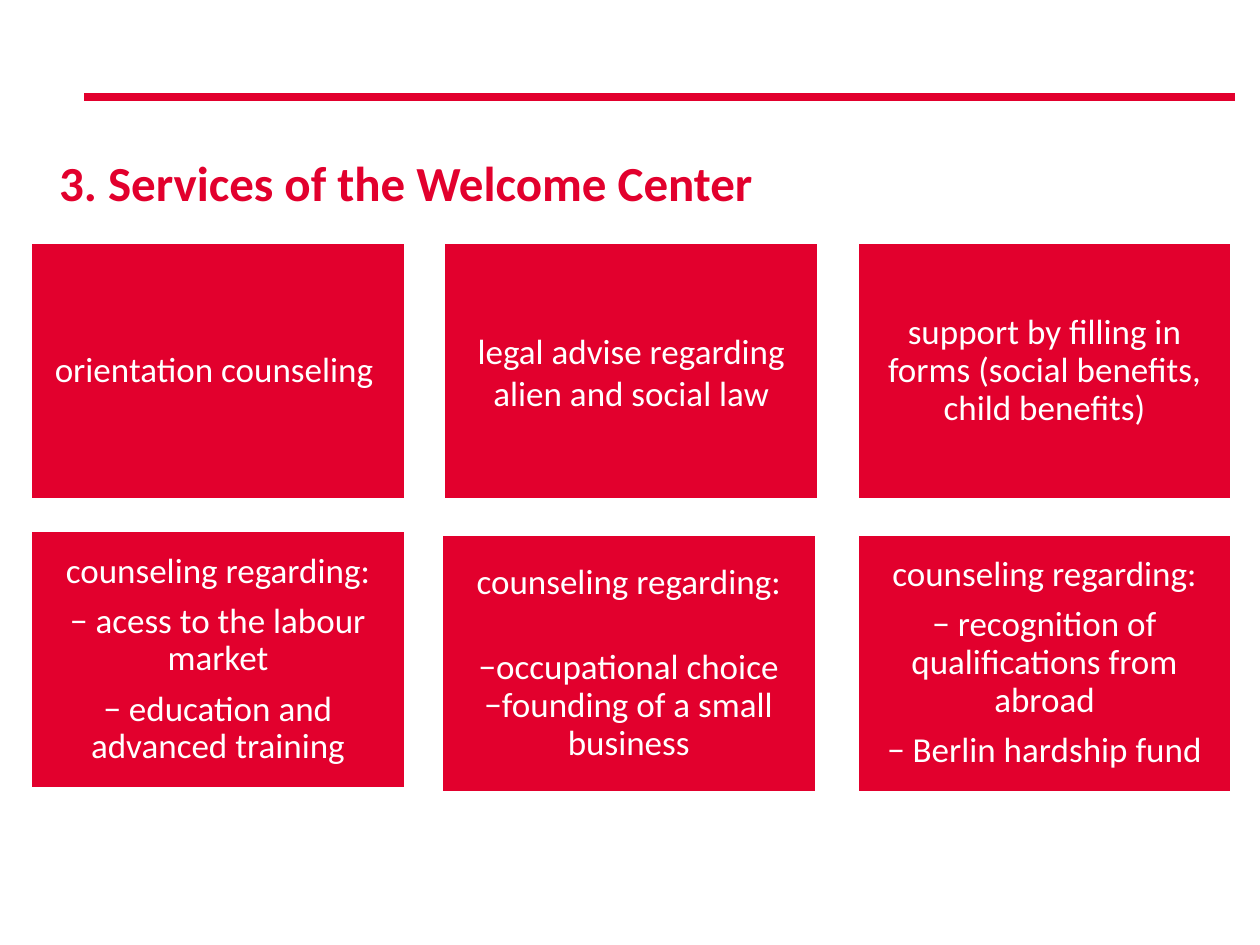
import lxml.etree
import pptx
import pptx.dml.color
import pptx.enum.shapes
import pptx.enum.text
import pptx.oxml.ns
import pptx.util

RED = "E2002D"
WHITE = "FFFFFF"


def color(hex_string):
    return pptx.dml.color.RGBColor.from_string(hex_string)


class ServicesSlide:
    font = "Calibri"
    grid_left, grid_top = 0.24, 1.92
    column_pitch, row_pitch = 3.28, 2.32
    card_width, card_height = 2.98, 2.05
    card_margin = 0.08

    def __init__(self, presentation):
        self.slide = presentation.slides.add_slide(presentation.slide_layouts[6])

    def style(self, paragraph, size, hex_string, bold=False):
        paragraph.font.name = self.font
        paragraph.font.size = pptx.util.Pt(size)
        paragraph.font.bold = bold
        paragraph.font.color.rgb = color(hex_string)

    def set_margins(self, frame, inches):
        frame.word_wrap = True
        frame.margin_left = frame.margin_right = pptx.util.Inches(inches)
        frame.margin_top = frame.margin_bottom = pptx.util.Inches(inches)

    def title(self, text, left, top, width, height):
        box = self.slide.shapes.add_textbox(
            *map(pptx.util.Inches, (left, top, width, height)))
        self.set_margins(box.text_frame, 0)
        heading = box.text_frame.paragraphs[0]
        heading.text = text
        self.style(heading, 28, RED, bold=True)

    def rule(self, left, right, y):
        line = self.slide.shapes.add_connector(
            pptx.enum.shapes.MSO_CONNECTOR.STRAIGHT,
            *map(pptx.util.Inches, (left, y, right, y)))
        line.line.color.rgb = color(RED)
        line.line.width = pptx.util.Pt(4.75)
        lxml.etree.SubElement(line._element.spPr,
                              pptx.oxml.ns.qn("a:effectLst"))

    def card(self, column, row, lines, gaps, spacing=0.9, shift=(0, 0)):
        """Fill a grid cell; gaps are points after each line, shift is inches."""
        left = self.grid_left + column * self.column_pitch + shift[0]
        top = self.grid_top + row * self.row_pitch + shift[1]
        card = self.slide.shapes.add_shape(
            pptx.enum.shapes.MSO_SHAPE.RECTANGLE,
            *map(pptx.util.Inches,
                 (left, top, self.card_width, self.card_height)))
        card.shadow.inherit = False
        card.fill.solid()
        card.fill.fore_color.rgb = color(RED)
        card.line.color.rgb = color(WHITE)
        card.line.width = pptx.util.Pt(2)
        frame = card.text_frame
        self.set_margins(frame, self.card_margin)
        frame.vertical_anchor = pptx.enum.text.MSO_ANCHOR.MIDDLE
        frame.text = "\n".join(lines)
        for paragraph, gap in zip(frame.paragraphs, gaps):
            paragraph.alignment = pptx.enum.text.PP_ALIGN.CENTER
            paragraph.line_spacing = spacing
            paragraph.space_after = pptx.util.Pt(gap)
            self.style(paragraph, 20, WHITE)


def main():
    presentation = pptx.Presentation()
    presentation.slide_width = pptx.util.Inches(10)
    presentation.slide_height = pptx.util.Inches(7.5)
    services = ServicesSlide(presentation)

    even_gaps = (7, 7, 7)
    topic = "counseling regarding:"
    services.card(0, 0, ["orientation counseling "], even_gaps)
    services.card(1, 0, ["legal advise regarding alien and social law"],
                  even_gaps, spacing=1.0)
    services.card(2, 0, ["support by filling in forms "
                         "(social benefits, child benefits)"], even_gaps)
    services.card(0, 1, [topic, "− acess to the labour market",
                         "− education and advanced training"],
                  even_gaps, shift=(0, -0.03))
    services.card(1, 1, [topic, "−occupational choice",
                         "−founding of a small business"],
                  (27, 0, 0), shift=(-0.02, 0))
    services.card(2, 1, [topic, "− recognition of qualifications from abroad",
                         "− Berlin hardship fund"], even_gaps)

    services.title("3. Services of the Welcome Center", 0.47, 1.21, 8.74, 0.74)
    services.rule(0.67, 9.8, 0.77)
    presentation.save("out.pptx")


if __name__ == "__main__":
    main()
